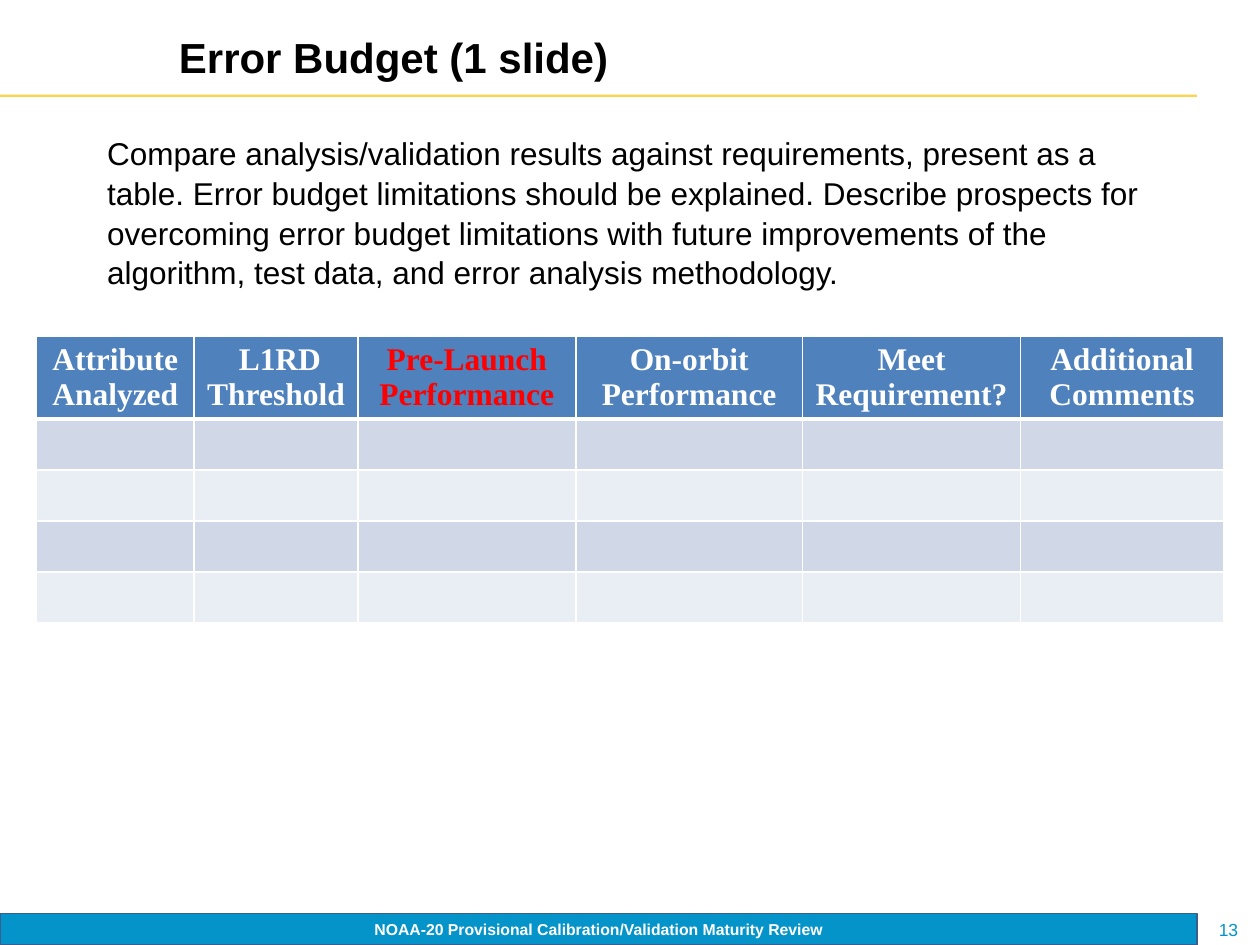
from lxml import etree
from pptx import Presentation
from pptx.dml.color import RGBColor
from pptx.enum.shapes import MSO_SHAPE
from pptx.enum.text import MSO_ANCHOR, MSO_AUTO_SIZE, PP_ALIGN
from pptx.oxml.ns import qn
from pptx.util import Inches, Pt

RECT = MSO_SHAPE.RECTANGLE
TOP, MIDDLE = MSO_ANCHOR.TOP, MSO_ANCHOR.MIDDLE
LEFT, CENTER = PP_ALIGN.LEFT, PP_ALIGN.CENTER

TITLE = "Error Budget (1 slide)"
BODY = ("Compare analysis/validation results against requirements, present as a table. "
        "Error budget limitations should be explained. Describe prospects for overcoming "
        "error budget limitations with future improvements of the algorithm, test data, "
        "and error analysis methodology.")
FOOTER = "NOAA-20 Provisional Calibration/Validation Maturity Review"
PAGE = "13"
COLUMNS = [  # heading, width, text style
    ("Attribute Analyzed", 1.25, "head"),
    (" L1RD Threshold", 1.3, "head"),
    ("Pre-Launch Performance", 1.73, "head_alert"),
    ("On-orbit Performance", 1.8, "head"),
    ("Meet Requirement?", 1.73, "head"),
    ("Additional Comments", 1.61, "head"),
]
EMPTY_ROWS = 4

THEME = {
    "fill": {"paper": "FFFFFF", "footer": "0594C9", "rule": "FFD24E", "footer_line": "3A5F8C",
             "head": "4F81BD", "bands": ("D0D8E8", "E9EDF4"), "grid": "FFFFFF"},
    "text": {  # font name, size, bold, colour
        "title": ("Arial", 24, True, "000000"),
        "body": ("Arial", 18, False, "000000"),
        "footer": ("Arial", 9, True, "FFFFFF"),
        "page": ("Arial", 10, False, "0594C9"),
        "head": ("Times New Roman", 18, True, "FFFFFF"),
        "head_alert": ("Times New Roman", 18, True, "FF0000"),
    },
}
FILL = THEME["fill"]

SLIDE_W, SLIDE_H = 10, 7.5
BAND_W = 0.95 * SLIDE_W
FOOTER_H = SLIDE_H / 30
FOOTER_Y = SLIDE_H - FOOTER_H
HEADER_H = SLIDE_H / 10
TABLE_X, TABLE_Y = 0.29, 2.67
HEAD_H, ROW_H = 0.65, 0.35


def rgb(value):
    return RGBColor.from_string(value)


def write(tf, text, style, align):
    p = tf.paragraphs[0]
    p.alignment = align
    r = p.add_run()
    r.text = text
    name, size, bold, color = THEME["text"][style]
    for key, value in {"name": name, "size": Pt(size), "bold": bold}.items():
        setattr(r.font, key, value)
    r.font.color.rgb = rgb(color)
    return p


def frame(tf, anchor, wrap, inset=None):
    tf.auto_size = MSO_AUTO_SIZE.NONE
    tf.vertical_anchor, tf.word_wrap = anchor, wrap
    if inset is not None:
        for side in ("left", "top", "right", "bottom"):
            setattr(tf, f"margin_{side}", Inches(inset))


def add_bar(slide, box, fill, line=None):
    sp = slide.shapes.add_shape(RECT, *map(Inches, box))
    sp.shadow.inherit = False
    sp.fill.solid()
    sp.fill.fore_color.rgb = rgb(fill)
    if line:
        sp.line.color.rgb = rgb(line)
        sp.line.width = Pt(0)
    else:
        sp.line.fill.background()


def add_label(slide, box, text, style):
    tf = slide.shapes.add_textbox(*map(Inches, box)).text_frame
    frame(tf, MIDDLE, False, 0)
    write(tf, text, style, CENTER)


def fill_placeholder(slide, sp, box, text, style, inset=None):
    """Place a template placeholder in front of the shapes drawn so far."""
    sp.left, sp.top, sp.width, sp.height = map(Inches, box)
    slide.shapes._spTree.append(sp._element)
    frame(sp.text_frame, TOP, True, inset)
    return write(sp.text_frame, text, style, LEFT)


def paint_cell(cell, fill, bottom):
    tc_pr = cell._tc.get_or_add_tcPr()
    for tag, width in (("lnL", 1), ("lnR", 1), ("lnT", 1), ("lnB", bottom)):
        ln = etree.SubElement(tc_pr, qn(f"a:{tag}"), w=str(Pt(width)))
        solid = etree.SubElement(ln, qn("a:solidFill"))
        etree.SubElement(solid, qn("a:srgbClr"), val=FILL["grid"])
    cell.fill.solid()
    cell.fill.fore_color.rgb = rgb(fill)


def add_budget_table(slide):
    width = sum(w for _, w, _ in COLUMNS)
    heights = [HEAD_H] + [ROW_H] * EMPTY_ROWS
    table = slide.shapes.add_table(len(heights), len(COLUMNS), *map(
        Inches, (TABLE_X, TABLE_Y, width, sum(heights)))).table
    for row, height in zip(table.rows, heights):
        row.height = Inches(height)
    for c, (heading, col_w, style) in enumerate(COLUMNS):
        table.columns[c].width = Inches(col_w)
        head = table.cell(0, c)
        paint_cell(head, FILL["head"], 3)
        write(head.text_frame, heading, style, CENTER)
        for r in range(1, len(heights)):
            paint_cell(table.cell(r, c), FILL["bands"][(r - 1) % 2], 1)


def main():
    prs = Presentation()
    prs.slide_width, prs.slide_height = Inches(SLIDE_W), Inches(SLIDE_H)
    slide = prs.slides.add_slide(prs.slide_layouts[1])
    title, body = slide.placeholders

    footer_box = (0, FOOTER_Y, BAND_W, FOOTER_H)
    add_bar(slide, footer_box, FILL["footer"], FILL["footer_line"])
    add_label(slide, (BAND_W, FOOTER_Y, SLIDE_W - BAND_W, FOOTER_H), PAGE, "page")
    add_label(slide, footer_box, FOOTER, "footer")
    add_bar(slide, (0, 0, BAND_W, HEADER_H), FILL["paper"])
    add_bar(slide, (0, HEADER_H, BAND_W, 0.02), FILL["rule"])

    fill_placeholder(slide, title, (1.42, 0.25, BAND_W - 1.42, 0.54), TITLE, "title", 0)
    p = fill_placeholder(slide, body, (0.75, 1, 8.58, 1.5), BODY, "body")
    p_pr = p._p.get_or_add_pPr()
    p_pr.set("marL", "0")
    p_pr.set("indent", "0")
    etree.SubElement(p_pr, qn("a:buNone"))
    for key, value in {"space_before": Pt(0), "space_after": Pt(6), "line_spacing": 1.05}.items():
        setattr(p, key, value)

    add_budget_table(slide)
    prs.save("out.pptx")


if __name__ == "__main__":
    main()
